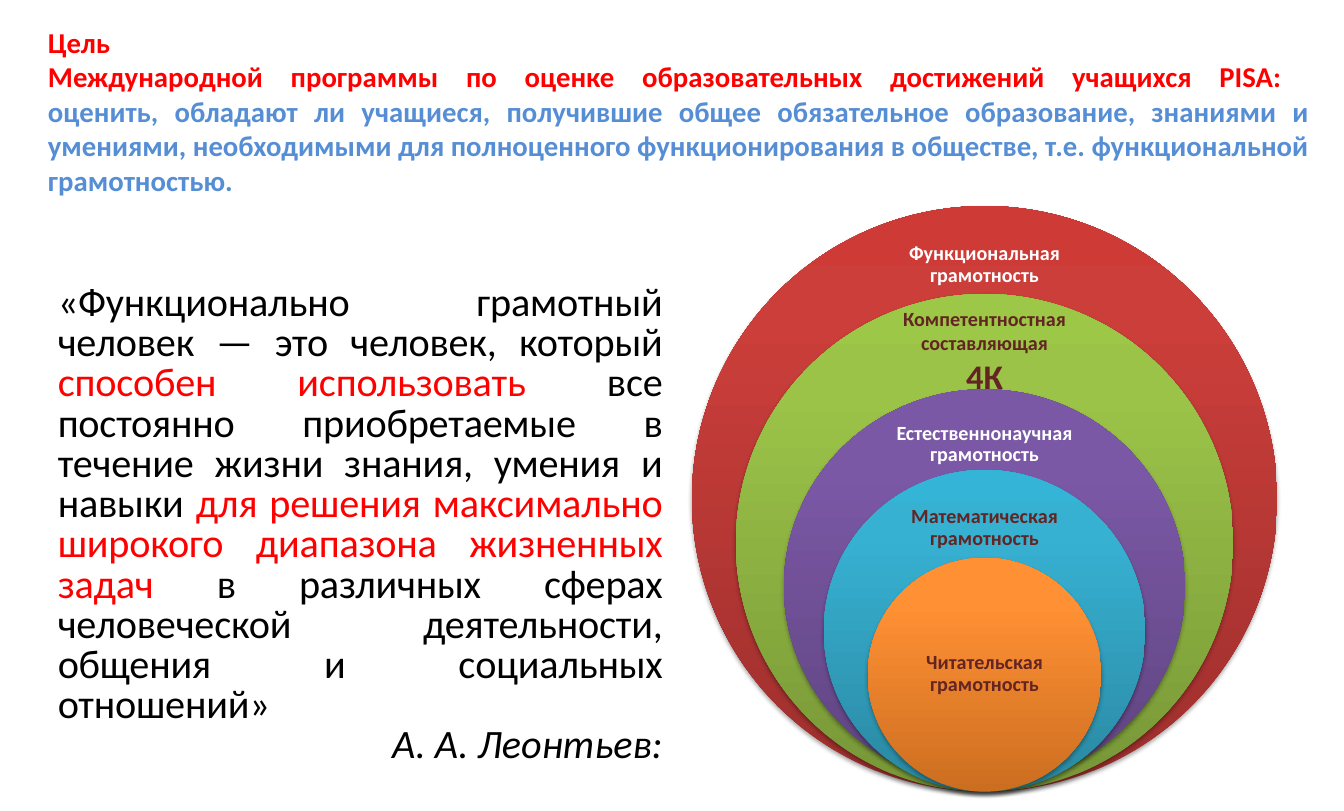
from copy import deepcopy
from dataclasses import dataclass

from lxml import etree
from pptx import Presentation
from pptx import util as u
from pptx.dml.color import RGBColor
from pptx.enum import shapes, text
from pptx.oxml.ns import qn

Cm, Pt = u.Cm, u.Pt
Align, Anchor = text.PP_ALIGN, text.MSO_ANCHOR


@dataclass(frozen=True)
class Theme:
    font: str = "Calibri"
    red: str = "FF0000"
    blue: str = "558ED5"
    black: str = "000000"
    white: str = "FFFFFF"
    maroon: str = "632523"
    title: int = 20
    body: int = 28
    label: int = 14
    accent: int = 24


T = Theme()
CM_PER_INCH = 2.54
SLIDE_W, SLIDE_H = 13 * CM_PER_INCH, 7.84 * CM_PER_INCH
CENTER_X, BASE_Y = 24.19, 19.44

TITLE = [
    ("Цель ", T.red),
    ("Международной программы по оценке образовательных достижений учащихся PISA: ", T.red),
    ("оценить, обладают ли учащиеся, получившие общее обязательное образование, "
     "знаниями и умениями, необходимыми для полноценного функционирования в обществе, "
     "т.е. функциональной грамотностью. ", T.blue),
]
QUOTE = [
    ("«Функционально грамотный человек — это человек, который ", T.black),
    ("способен использовать ", T.red),
    ("все постоянно приобретаемые в течение жизни знания, умения и навыки ", T.black),
    ("для решения максимально широкого диапазона жизненных задач ", T.red),
    ("в различных сферах человеческой деятельности, общения и социальных отношений»", T.black),
]
# (width, height, bottom), gradient from bottom to top,
# (label top, width, height), label colour, label lines with sizes
RINGS = [
    ((14.38, 14.38, BASE_Y), ("9C2F2D", "CB3E3A", "CE3B37"), (5.79, 5.38, 1.45),
     T.white, [("Функциональная грамотность", T.label)]),
    ((12.22, 12.22, BASE_Y), ("779737", "9BC348", "9DC746"), (7.93, 5.26, 1.4),
     T.maroon, [("Компетентностная составляющая", T.label), ("4К", T.accent)]),
    ((9.86, 9.68, 19.24), ("5F4480", "7B58A6", "7C57A8"), (10.24, 5.11, 1.35),
     T.white, [("Естественнонаучная грамотность", T.label)]),
    ((7.9, 7.9, BASE_Y), ("2A88A2", "37B1D2", "34B4D6"), (12.25, 4.27, 1.42),
     T.maroon, [("Математическая грамотность", T.label)]),
    ((5.74, 5.74, BASE_Y), ("CC6E20", "FF9034", "FF9136"), (15.12, 4.06, 2.87),
     T.maroon, [("Читательская грамотность", T.label)]),
]


def add_box(s, x, y, w, h, anchor, inset=0.0):
    tf = s.shapes.add_textbox(Cm(x), Cm(y), Cm(w), Cm(h)).text_frame
    tf.word_wrap = True
    tf.vertical_anchor = anchor
    tf.margin_left = tf.margin_top = tf.margin_right = tf.margin_bottom = Cm(inset)
    return tf


def add_run(p, content, size, color, bold=False, italic=False):
    r = p.add_run()
    r.text = content
    f = r.font
    f.name, f.size, f.bold, f.italic = T.font, Pt(size), bold, italic
    f.color.rgb = RGBColor.from_string(color)
    return r


def indent(p, left):
    p._p.get_or_add_pPr().set("marL", str(Cm(left)))


def add_title(s):
    tf = add_box(s, 0.85, -0.18, 31.32, 5.05, Anchor.MIDDLE)
    tf.margin_top = Cm(0.76)
    p = tf.paragraphs[0]
    p.alignment = Align.JUSTIFY
    indent(p, 0.33)
    for i, (content, color) in enumerate(TITLE):
        if i:
            p.add_line_break()
        add_run(p, content, T.title, color, bold=True)


def add_quote(s):
    tf = add_box(s, 0, 6.98, 16.28, 12.9, Anchor.TOP)
    quote, author = tf.paragraphs[0], tf.add_paragraph()
    for p, alignment in ((quote, Align.JUSTIFY), (author, Align.RIGHT)):
        p.alignment = alignment
        p.line_spacing = Pt(T.body)
        indent(p, 1.42)
    for content, color in QUOTE:
        r = add_run(quote, content, T.body, color)
        r.font._element.set("spc", "-10")  # tighten by 0.1 pt
    add_run(author, "А. А. Леонтьев:", T.body, T.black, italic=True)


def fill_gradient(sp, colors):
    """Three stops running from the bottom to the top."""
    sp.fill.gradient()
    sp.fill.gradient_angle = 90
    stop_list = sp._element.spPr.find(".//" + qn("a:gsLst"))
    stop_list.append(deepcopy(stop_list[-1]))
    for stop, position, color in zip(sp.fill.gradient_stops, (0, 0.8, 1), colors):
        stop.position = position
        stop.color.rgb = RGBColor.from_string(color)


def add_shadow(sp):
    sp.shadow.inherit = False
    effects = sp._element.spPr.find(qn("a:effectLst"))
    shadow = etree.SubElement(effects, qn("a:outerShdw"), blurRad=str(Pt(3.1)),
                              dist=str(Pt(1.8)), dir="5400000", rotWithShape="0")
    color = etree.SubElement(shadow, qn("a:srgbClr"), val=T.black)
    etree.SubElement(color, qn("a:alpha"), val="35000")


def add_ring(s, size, colors):
    w, h, bottom = size
    sp = s.shapes.add_shape(shapes.MSO_SHAPE.OVAL, Cm(CENTER_X - w / 2),
                            Cm(bottom - h), Cm(w), Cm(h))
    fill_gradient(sp, colors)
    sp.line.fill.background()
    add_shadow(sp)


def add_label(s, place, color, lines):
    top, w, h = place
    tf = add_box(s, CENTER_X - w / 2, top, w, h, Anchor.MIDDLE, inset=0.28)
    for i, (content, size) in enumerate(lines):
        p = tf.add_paragraph() if i else tf.paragraphs[0]
        p.alignment = Align.CENTER
        if len(lines) == 1:
            p.line_spacing = 0.9
        add_run(p, content, size, color, bold=True)


def main():
    prs = Presentation()
    prs.slide_width, prs.slide_height = Cm(SLIDE_W), Cm(SLIDE_H)
    s = prs.slides.add_slide(prs.slide_layouts[6])
    add_title(s)
    add_quote(s)
    for size, gradient, place, color, lines in RINGS:
        add_ring(s, size, gradient)
        add_label(s, place, color, lines)
    prs.save("out.pptx")


if __name__ == "__main__":
    main()
